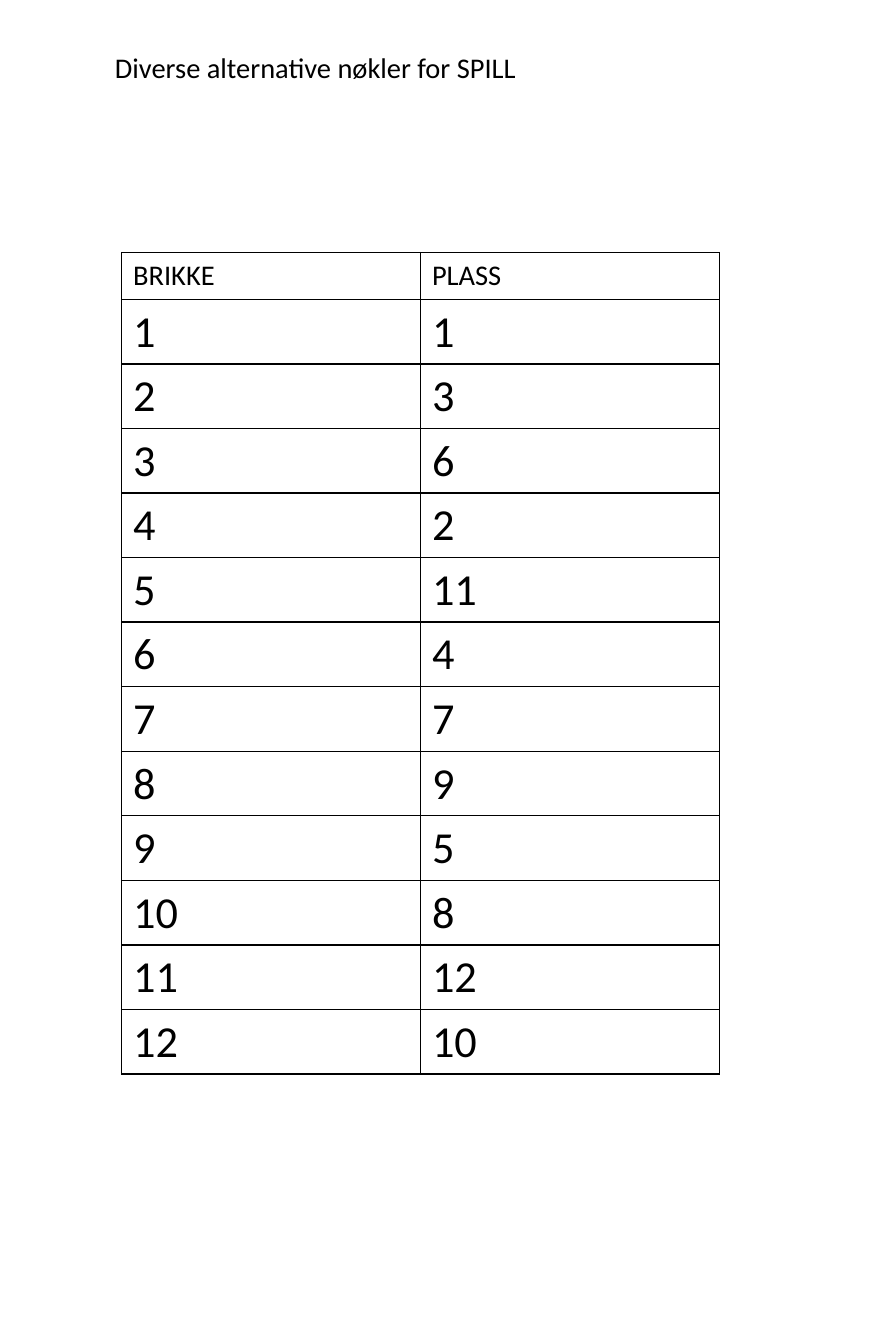
from dataclasses import dataclass

from lxml import etree
from pptx import Presentation
from pptx.dml.color import RGBColor
from pptx.enum.text import MSO_ANCHOR, MSO_AUTO_SIZE, PP_ALIGN
from pptx.oxml.ns import qn
from pptx.util import Emu, Inches, Pt

TOP = MSO_ANCHOR.TOP
FIT_SHAPE = MSO_AUTO_SIZE.SHAPE_TO_FIT_TEXT
LEFT = PP_ALIGN.LEFT

FONT = "Calibri"
COLOURS = {"text": "000000", "border": "000000"}
SLIDE_WIDTH, SLIDE_HEIGHT = Inches(7.87), Inches(11.81)
LABEL_SIZE, NUMBER_SIZE = 18, 28
BORDER_WIDTH = Pt(1)
TITLE = "Diverse alternative nøkler for SPILL"
HEADINGS = ("BRIKKE", "PLASS")
PLACES = (1, 3, 6, 2, 11, 4, 7, 9, 5, 8, 12, 10)


@dataclass(frozen=True)
class Area:
    """A rectangle in inches on the slide."""
    left: float
    top: float
    width: float
    height: float

    def lengths(self) -> tuple[Emu, Emu, Emu, Emu]:
        return (Inches(self.left), Inches(self.top),
                Inches(self.width), Inches(self.height))


@dataclass(frozen=True)
class KeyRow:
    """One table row with its text size and height."""
    values: tuple[str, ...]
    size: int
    height: float


TITLE_AREA = Area(0.91, 0.39, 5.95, 0.4)
TABLE_AREA = Area(1.07, 2.22, 5.25, 7.21)
HEADING_HEIGHT = 0.41
NUMBER_HEIGHT = (TABLE_AREA.height - HEADING_HEIGHT) / len(PLACES)


def style_paragraph(paragraph, size: int) -> None:
    paragraph.alignment = LEFT
    font = paragraph.font
    font.name, font.size, font.bold = FONT, Pt(size), False
    font.color.rgb = RGBColor.from_string(COLOURS["text"])


def add_borders(cell) -> None:
    properties = cell._tc.get_or_add_tcPr()
    for side in ("a:lnL", "a:lnR", "a:lnT", "a:lnB"):
        line = etree.SubElement(properties, qn(side), w=str(BORDER_WIDTH))
        fill = etree.SubElement(line, qn("a:solidFill"))
        etree.SubElement(fill, qn("a:srgbClr"), val=COLOURS["border"])


def add_title(page) -> None:
    box = page.shapes.title
    box.left, box.top, box.width, box.height = TITLE_AREA.lengths()
    frame = box.text_frame
    frame.text = TITLE
    frame.word_wrap = True
    frame.auto_size = FIT_SHAPE
    frame.vertical_anchor = TOP
    paragraph = frame.paragraphs[0]
    paragraph.line_spacing = 1.0
    paragraph.space_before = Pt(0)
    style_paragraph(paragraph, LABEL_SIZE)


def add_key_table(page, rows: list[KeyRow]) -> None:
    table = page.shapes.add_table(
        len(rows), len(HEADINGS), *TABLE_AREA.lengths()).table
    table.first_row = table.horz_banding = False
    for table_row, row in zip(table.rows, rows):
        table_row.height = Inches(row.height)
        for cell, value in zip(table_row.cells, row.values):
            cell.text = value
            style_paragraph(cell.text_frame.paragraphs[0], row.size)
            add_borders(cell)
            cell.fill.background()


def main() -> None:
    deck = Presentation()
    deck.slide_width, deck.slide_height = SLIDE_WIDTH, SLIDE_HEIGHT
    page = deck.slides.add_slide(deck.slide_layouts.get_by_name("Title Only"))

    # Title
    add_title(page)

    # Key table: pieces in order, each with its place
    rows = [KeyRow(HEADINGS, LABEL_SIZE, HEADING_HEIGHT)]
    rows += [KeyRow((str(piece), str(place)), NUMBER_SIZE, NUMBER_HEIGHT)
             for piece, place in enumerate(PLACES, start=1)]
    add_key_table(page, rows)

    deck.save("out.pptx")


if __name__ == "__main__":
    main()
